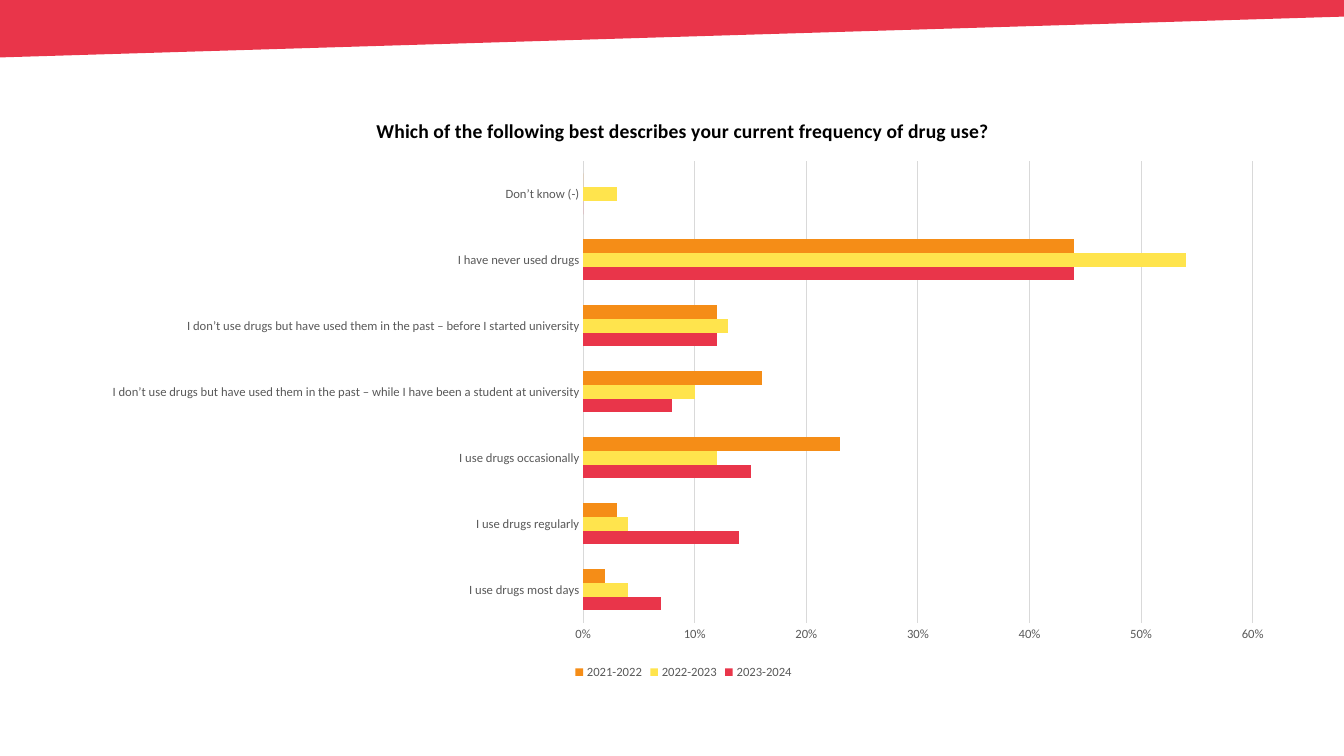
from pptx import Presentation
from pptx.chart.data import CategoryChartData
from pptx.dml.color import RGBColor
from pptx.enum.chart import XL_CHART_TYPE, XL_LEGEND_POSITION, XL_TICK_MARK
from pptx.oxml import parse_xml
from pptx.oxml.ns import nsdecls
from pptx.util import Inches, Pt

RED = RGBColor(0xE9, 0x35, 0x4A)
YELLOW = RGBColor(0xFF, 0xE4, 0x4D)
ORANGE = RGBColor(0xF5, 0x8D, 0x17)
BLACK = RGBColor(0x00, 0x00, 0x00)
GREY = RGBColor(0x59, 0x59, 0x59)
LIGHT_GREY = RGBColor(0xD9, 0xD9, 0xD9)

QUESTION = "Which of the following best describes your current frequency of drug use?"
PAST_USE = "I don’t use drugs but have used them in the past – "
YEARS = {"2023-2024": RED, "2022-2023": YELLOW, "2021-2022": ORANGE}
# One share for each year, in the order of YEARS
ANSWERS = {
    "I use drugs most days": (0.07, 0.04, 0.02),
    "I use drugs regularly": (0.14, 0.04, 0.03),
    "I use drugs occasionally": (0.15, 0.12, 0.23),
    PAST_USE + "while I have been a student at university": (0.08, 0.10, 0.16),
    PAST_USE + "before I started university": (0.12, 0.13, 0.12),
    "I have never used drugs": (0.44, 0.54, 0.44),
    "Don’t know (-)": (0, 0.03, 0),
}


def set_format(target, **values):
    for name, value in values.items():
        setattr(target, name, value)


class SlideBuilder:
    """Places elements on a grid of 100 columns by 100 rows."""

    font_name = "Calibri"

    def __init__(self, presentation):
        self.column = presentation.slide_width / 100
        self.row = presentation.slide_height / 100
        self.slide = presentation.slides.add_slide(presentation.slide_layouts[6])

    def point(self, column, row):
        return round(column * self.column), round(row * self.row)

    def style_font(self, font, size, color, bold=False):
        set_format(font, name=self.font_name, size=Pt(size), bold=bold)
        font.color.rgb = color

    def style_line(self, line, color):
        line.color.rgb = color
        line.width = Pt(0.75)

    def polygon(self, corners, color):
        first, *others = [self.point(*corner) for corner in corners]
        builder = self.slide.shapes.build_freeform(*first)
        builder.add_line_segments(others, close=True)
        shape = builder.convert_to_shape()
        shape.shadow.inherit = False
        shape.fill.solid()
        shape.fill.fore_color.rgb = color
        shape.line.fill.background()

    def place(self, element, index, target="", **shares):
        """Fix a chart part's position, in shares of the chart's size."""
        for old_layout in element.xpath("c:layout"):
            element.remove(old_layout)
        modes = '<c:xMode val="edge"/><c:yMode val="edge"/>'
        sizes = "".join(f'<c:{name} val="{value}"/>' for name, value in shares.items())
        element.insert(index, parse_xml(
            f'<c:layout {nsdecls("c")}><c:manualLayout>{target}{modes}{sizes}'
            "</c:manualLayout></c:layout>"))

    def bar_chart(self, left_top, size, title, answers, years):
        data = CategoryChartData(number_format="0%")
        data.categories = list(answers)
        for year, values in zip(years, zip(*answers.values())):
            data.add_series(year, values)
        chart = self.slide.shapes.add_chart(
            XL_CHART_TYPE.BAR_CLUSTERED, *self.point(*left_top),
            *self.point(*size), data).chart
        self.style_font(chart.font, 10, BLACK)

        # Title
        chart.has_title = True
        paragraph = chart.chart_title.text_frame.paragraphs[0]
        run = paragraph.add_run()
        run.text = title
        self.style_font(run.font, 14, BLACK, bold=True)
        self.place(chart.chart_title.element, 1, x=0.24, y=0.03)

        # Bars
        plot = chart.plots[0]
        set_format(plot, gap_width=182, vary_by_categories=False)
        for series, color in zip(plot.series, years.values()):
            series.invert_if_negative = False
            series.format.fill.solid()
            series.format.fill.fore_color.rgb = color
        self.place(chart.element.xpath("c:chart/c:plotArea")[0], 0,
                   target='<c:layoutTarget val="inner"/>',
                   x=0.416, y=0.111, w=0.56, h=0.786)

        # Axes
        for axis in (chart.category_axis, chart.value_axis):
            set_format(axis, major_tick_mark=XL_TICK_MARK.NONE,
                       minor_tick_mark=XL_TICK_MARK.NONE)
            self.style_font(axis.tick_labels.font, 9, GREY)
        self.style_line(chart.category_axis.format.line, LIGHT_GREY)
        value_axis = chart.value_axis
        set_format(value_axis, minimum_scale=0, maximum_scale=0.6, major_unit=0.1,
                   has_major_gridlines=True)
        set_format(value_axis.tick_labels, number_format="0%",
                   number_format_is_linked=False)
        value_axis.format.line.fill.background()
        self.style_line(value_axis.major_gridlines.format.line, LIGHT_GREY)

        # Legend
        chart.has_legend = True
        set_format(chart.legend, position=XL_LEGEND_POSITION.BOTTOM,
                   include_in_layout=False)
        self.style_font(chart.legend.font, 9, GREY)


def main():
    presentation = Presentation()
    set_format(presentation, slide_width=Inches(13.33), slide_height=Inches(7.5))
    builder = SlideBuilder(presentation)

    # Slanted banner along the top edge
    builder.polygon([(0, 0), (0, 7.6), (100, 2.2), (100, 0)], RED)

    # Answers by year
    builder.bar_chart((6.38, 12.67), (88.97, 77.73), QUESTION, ANSWERS, YEARS)

    presentation.save("out.pptx")


if __name__ == "__main__":
    main()
